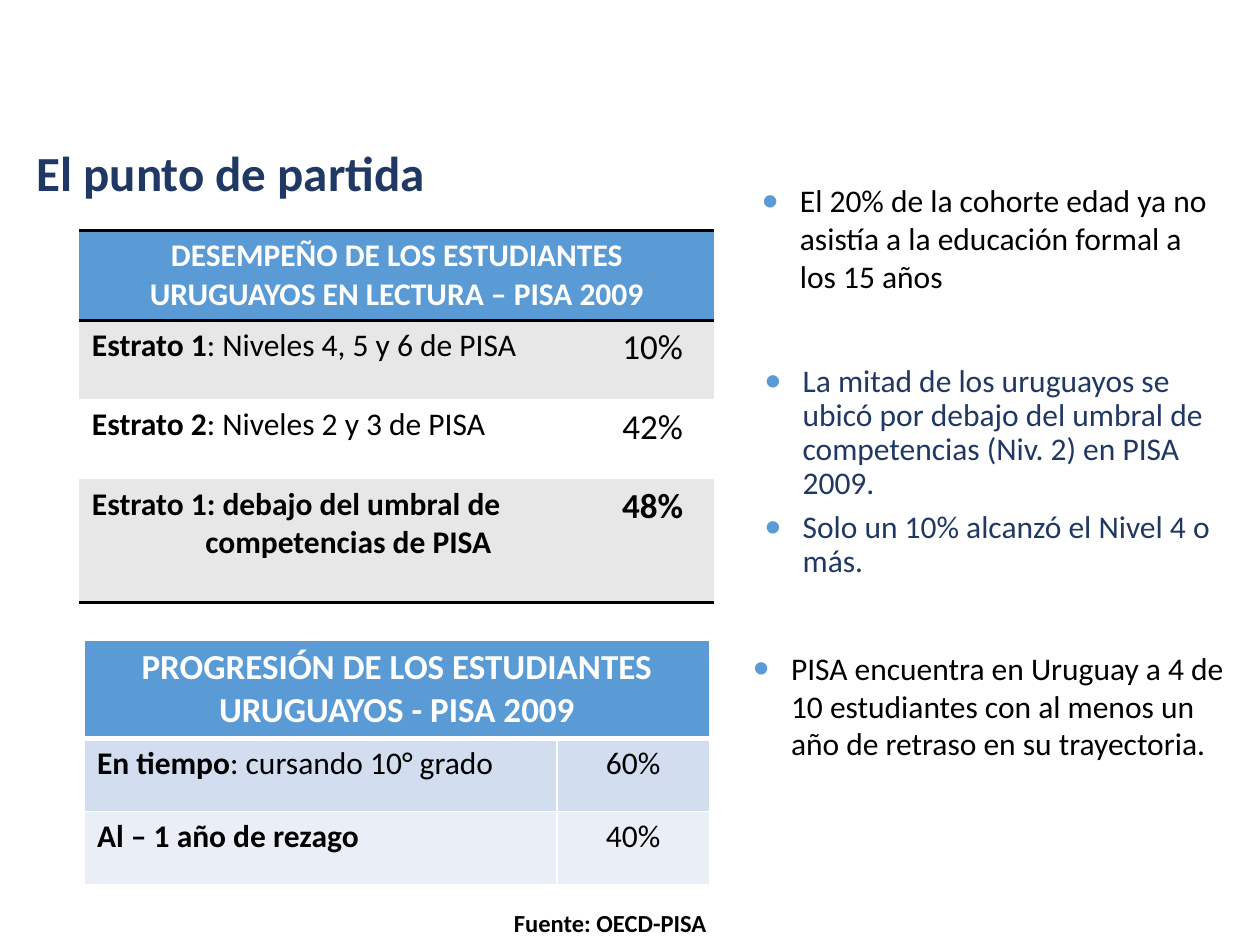
from lxml import etree
from pptx import Presentation
from pptx.dml.color import RGBColor
from pptx.enum.text import MSO_ANCHOR, MSO_AUTO_SIZE, PP_ALIGN
from pptx.oxml.ns import qn
from pptx.util import Inches, Pt

LEFT, MID = PP_ALIGN.LEFT, PP_ALIGN.CENTER
NAVY = RGBColor(0x20, 0x38, 0x64)
BLUE = RGBColor(0x5B, 0x9B, 0xD5)
BLACK = RGBColor(0, 0, 0)
WHITE = RGBColor(0xFF, 0xFF, 0xFF)
GRAY = RGBColor(0xE7, 0xE7, 0xE7)
PALE = RGBColor(0xD2, 0xDE, 0xEF)
MIST = RGBColor(0xEA, 0xEF, 0xF7)
FONT = "Calibri"

TITLE = "El punto de partida"
SOURCE = "Fuente: OECD-PISA"
BODY = [
    "La mitad de los uruguayos se ubicó por debajo del umbral de "
    "competencias (Niv. 2) en PISA 2009.",
    "Solo un 10% alcanzó el Nivel 4 o más.",
]
NOTES = [
    ("El 20% de la cohorte edad ya no asistía a la educación formal a los 15 años",
     (5.95, 1.39, 3.78, 0.94)),
    ("PISA encuentra en Uruguay a 4 de 10 estudiantes con al menos un año de "
     "retraso en su trayectoria.", (5.88, 5.1, 3.94, 2.4)),
]
# A label is a list of lines, each line a list of (text, bold) runs.
LEVELS = {
    "head": "DESEMPEÑO DE LOS ESTUDIANTES URUGUAYOS EN LECTURA – PISA 2009",
    "rows": [
        ([[("Estrato 1", True), (": Niveles 4, 5 y 6 de PISA", False)]], "10%", False),
        ([[("Estrato 2", True), (": Niveles 2 y 3 de PISA", False)]], "42%", False),
        ([[("Estrato 1: debajo del umbral de", True)],
          [("competencias de PISA", True)]], "48%", True),
    ],
    "at": (0.63, 1.83), "cols": (4.06, 0.98), "tall": (0.71, 0.63, 0.63, 0.98),
    "fills": (GRAY, WHITE), "sizes": (18, 20),
    "edges": {0: {"T": (BLACK, 2), "B": (BLACK, 2)}, 1: {"T": (BLACK, 2)},
              3: {"B": (BLACK, 2)}},
}
GRID = {side: (WHITE, 1) for side in "LRTB"}
PACE = {
    "head": "PROGRESIÓN DE LOS ESTUDIANTES URUGUAYOS - PISA 2009",
    "rows": [
        ([[("En tiempo", True), (": cursando 10° grado", False)]], "60%", False),
        ([[("Al – 1 año de rezago", True)]], "40%", False),
    ],
    "at": (0.67, 5.08), "cols": (3.75, 1.21), "tall": (0.77, 0.58, 0.58),
    "fills": (PALE, MIST), "sizes": (20, 18),
    "edges": {0: {**GRID, "B": (WHITE, 3)}, 1: {**GRID, "T": (WHITE, 3)}, 2: GRID},
}


def place(shape, box):
    for name, size in zip(("left", "top", "width", "height"), box):
        setattr(shape, name, Inches(size))


def write(para, text, size, color, bold=False):
    run = para.add_run()
    run.text = text
    look = {"name": FONT, "size": Pt(size), "bold": bold}
    for name, value in look.items():
        setattr(run.font, name, value)
    run.font.color.rgb = color


def indent(para, left, first=0):
    props = para._p.get_or_add_pPr()
    props.set("marL", str(Inches(left)))
    props.set("indent", str(Inches(first)))
    return props


def list_items(frame, items, color, spacing):
    frame.word_wrap = True
    frame.auto_size = MSO_AUTO_SIZE.NONE
    for i, text in enumerate(items):
        para = frame.add_paragraph() if i else frame.paragraphs[0]
        props = indent(para, 0.3, -0.3)
        tint = etree.SubElement(props, qn("a:buClr"))
        etree.SubElement(tint, qn("a:srgbClr"), val=str(BLUE))
        etree.SubElement(props, qn("a:buSzPct"), val="85000")
        etree.SubElement(props, qn("a:buFont"), typeface=FONT)
        etree.SubElement(props, qn("a:buChar"), char="●")
        para.line_spacing = spacing
        para.space_before = Pt(5.8 if i else 0)
        write(para, text, 18, color)


def rule(cell, edges):
    """Draw the given edges of a cell and clear the others."""
    props = cell._tc.get_or_add_tcPr()
    for i, side in enumerate("LRTB"):
        color, width = edges.get(side, (None, 0))
        line = etree.Element(qn("a:ln" + side), w=str(Pt(width)))
        if color is None:
            etree.SubElement(line, qn("a:noFill"))
        else:
            fill = etree.SubElement(line, qn("a:solidFill"))
            etree.SubElement(fill, qn("a:srgbClr"), val=str(color))
        props.insert(i, line)


def add_grid(slide, data):
    heights, widths = data["tall"], data["cols"]
    box = (*data["at"], sum(widths), sum(heights))
    table = slide.shapes.add_table(
        len(heights), len(widths), *map(Inches, box)).table
    for col, width in zip(table.columns, widths):
        col.width = Inches(width)
    for r, height in enumerate(heights):
        table.rows[r].height = Inches(height)
        for cell in table.rows[r].cells:
            cell.fill.solid()
            cell.fill.fore_color.rgb = data["fills"][(r - 1) % 2] if r else BLUE
            rule(cell, data["edges"].get(r, {}))

    head = table.cell(0, 0)
    head.merge(table.cell(0, 1))
    para = head.text_frame.paragraphs[0]
    para.alignment = MID
    head_size, value_size = data["sizes"]
    write(para, data["head"], head_size, WHITE, True)

    for r, (lines, value, bold) in enumerate(data["rows"], 1):
        frame = table.cell(r, 0).text_frame
        for i, line in enumerate(lines):
            para = frame.add_paragraph() if i else frame.paragraphs[0]
            if i:
                indent(para, 0.9)
            for text, strong in line:
                write(para, text, 18, BLACK, strong)
        para = table.cell(r, 1).text_frame.paragraphs[0]
        para.alignment = MID
        write(para, value, value_size, BLACK, bold)


def main():
    deck = Presentation()
    deck.slide_width, deck.slide_height = Inches(10), Inches(7.5)
    slide = deck.slides.add_slide(deck.slide_layouts[1])

    title, body = slide.shapes.title, slide.placeholders[1]
    place(title, (0.19, 0.77, 8.5, 1.25))
    title.text_frame.vertical_anchor = MSO_ANCHOR.MIDDLE
    para = title.text_frame.paragraphs[0]
    para.alignment, para.line_spacing = LEFT, 0.9
    write(para, TITLE, 28, NAVY, True)

    place(body, (5.97, 2.85, 3.78, 2.4))
    list_items(body.text_frame, BODY, NAVY, 0.9)

    for data in (LEVELS, PACE):
        add_grid(slide, data)
    for text, box in NOTES:
        note = slide.shapes.add_textbox(*map(Inches, box))
        list_items(note.text_frame, [text], BLACK, 1.0)

    source = slide.shapes.add_textbox(*map(Inches, (3.98, 7.16, 3.3, 0.34)))
    source.text_frame.word_wrap = True
    write(source.text_frame.paragraphs[0], SOURCE, 14, BLACK, True)
    deck.save("out.pptx")


if __name__ == "__main__":
    main()
